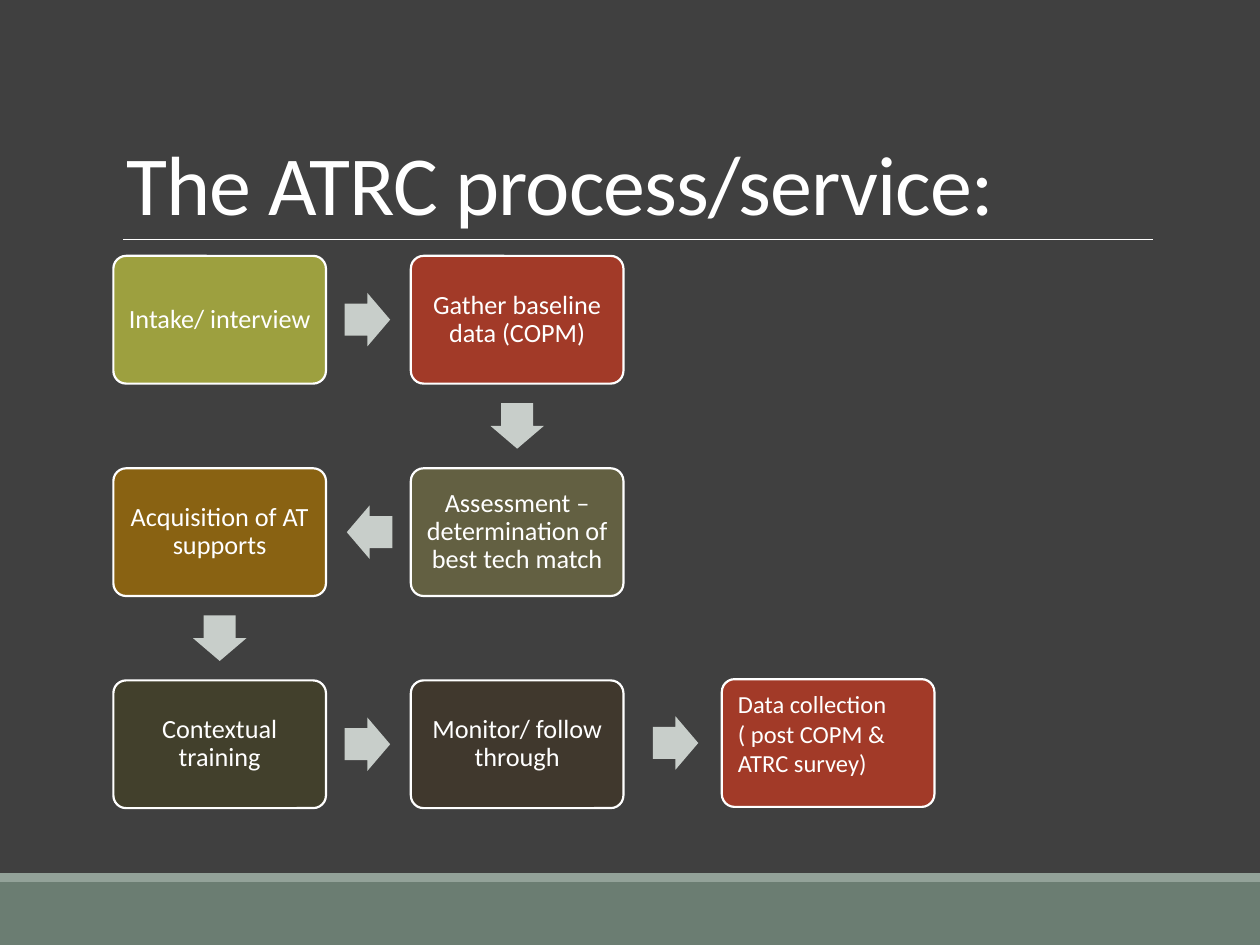
from lxml.etree import SubElement
from pptx import Presentation
from pptx.dml.color import RGBColor
from pptx.enum.shapes import MSO_CONNECTOR, MSO_SHAPE
from pptx.enum.text import MSO_ANCHOR, MSO_AUTO_SIZE, PP_ALIGN
from pptx.oxml.ns import qn
from pptx.util import Pt

BOX_W, BOX_H = 121.5, 73
ARROW_W, ARROW_H = 26, 30.5
COLS = (64.8, 234.8)
ROWS = (146.2, 267.6, 388.8)

STEPS = [
    (0, 0, "Intake/ interview", "9DA03F"),
    (1, 0, "Gather baseline data (COPM)", "A23A28"),
    (1, 1, "Assessment – determination of best tech match", "636042"),
    (0, 1, "Acquisition of AT supports", "896212"),
    (0, 2, "Contextual training", "42402C"),
    (1, 2, "Monitor/ follow through", "40382D"),
]


def rgb(value):
    return RGBColor.from_string(value)


def write(tf, text, size=15, color="FFFFFF", font="Calibri", align=PP_ALIGN.CENTER,
          anchor=MSO_ANCHOR.MIDDLE, inset=(4.5, 4.5), line_spacing=0.9, tracking=None):
    tf.word_wrap = True
    tf.auto_size = MSO_AUTO_SIZE.NONE
    tf.vertical_anchor = anchor
    tf.margin_left = tf.margin_right = Pt(inset[0])
    tf.margin_top = tf.margin_bottom = Pt(inset[1])
    for i, line in enumerate(text.split("\n")):
        p = tf.paragraphs[0] if i == 0 else tf.add_paragraph()
        p.alignment = align
        p.line_spacing = line_spacing
        r = p.add_run()
        r.text = line
        r.font.size = Pt(size)
        r.font.name = font
        r.font.color.rgb = rgb(color)
        if tracking is not None:
            r.font._element.set("spc", str(int(tracking * 100)))


class Deck:
    line_color = "FFFFFF"
    arrow_color = "C8CECA"

    def __init__(self, prs):
        self.s = prs.slides.add_slide(prs.slide_layouts[5])

    def background(self, color):
        fill = self.s.background.fill
        fill.solid()
        fill.fore_color.rgb = rgb(color)

    def title(self, text, x, y, w, h):
        sp = self.s.shapes.title
        sp.left, sp.top, sp.width, sp.height = Pt(x), Pt(y), Pt(w), Pt(h)
        write(sp.text_frame, text, size=48, align=PP_ALIGN.LEFT,
              anchor=MSO_ANCHOR.BOTTOM, inset=(7.2, 3.6), line_spacing=0.85, tracking=-0.5)

    def shape(self, kind, x, y, w, h, color, line_width=None):
        sp = self.s.shapes.add_shape(kind, Pt(x), Pt(y), Pt(w), Pt(h))
        sp.shadow.inherit = False
        sp.fill.solid()
        sp.fill.fore_color.rgb = rgb(color)
        if line_width is None:
            sp.line.fill.background()
        else:
            sp.line.color.rgb = rgb(self.line_color)
            sp.line.width = Pt(line_width)
        return sp

    def rule(self, x1, x2, y):
        c = self.s.shapes.add_connector(MSO_CONNECTOR.STRAIGHT, Pt(x1), Pt(y), Pt(x2), Pt(y))
        c.line.color.rgb = rgb(self.line_color)
        c.line.width = Pt(0.5)
        SubElement(c.element.spPr, qn("a:effectLst"))

    def step(self, x, y, text, color, **fmt):
        sp = self.shape(MSO_SHAPE.ROUNDED_RECTANGLE, x, y, BOX_W, BOX_H, color, 1.25)
        sp.adjustments[0] = 0.1
        write(sp.text_frame, text, **fmt)

    def arrow(self, cx, cy, rotation=0):
        sp = self.shape(MSO_SHAPE.RIGHT_ARROW, cx - ARROW_W / 2, cy - ARROW_H / 2,
                        ARROW_W, ARROW_H, self.arrow_color)
        sp.adjustments[0] = 0.6
        sp.adjustments[1] = 0.5
        sp.rotation = rotation


def main():
    prs = Presentation()
    prs.slide_width, prs.slide_height = Pt(720), Pt(540)
    deck = Deck(prs)
    deck.background("404040")
    deck.shape(MSO_SHAPE.RECTANGLE, 0, 504, 720, 36, "6B7D72")
    deck.shape(MSO_SHAPE.RECTANGLE, 0, 499, 720, 5, "93A299")
    deck.rule(70.5, 658.8, 136.8)
    deck.title("The ATRC process/service:", 64.8, 22.3, 594, 114.5)

    for col, row, text, color in STEPS:
        deck.step(COLS[col], ROWS[row], text, color)

    for (col, row, *_), (next_col, next_row, *_) in zip(STEPS, STEPS[1:]):
        cx = (COLS[col] + COLS[next_col] + BOX_W) / 2
        cy = (ROWS[row] + ROWS[next_row] + BOX_H) / 2
        if row != next_row:
            deck.arrow(cx, cy, 90)
        elif next_col > col:
            deck.arrow(cx - 0.6, cy)
        else:
            deck.arrow(cx + 0.6, cy, 180)

    deck.arrow(386, ROWS[2] + BOX_H / 2 - 0.7)
    deck.step(412.5, ROWS[2] - 0.7, "Data collection\n( post COPM & ATRC survey)", "A23A28",
              size=14, align=PP_ALIGN.LEFT, anchor=MSO_ANCHOR.TOP,
              inset=(7.2, 3.6), line_spacing=1.0)
    prs.save("out.pptx")


if __name__ == "__main__":
    main()
